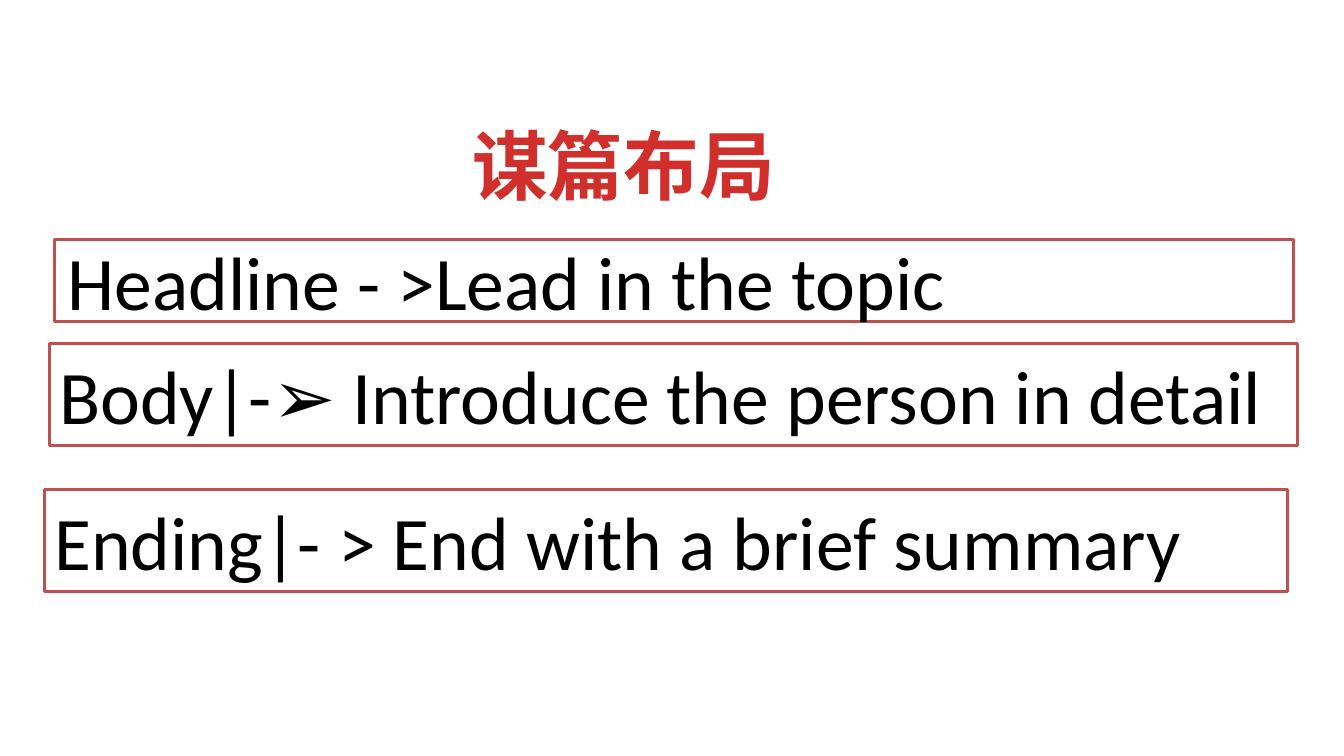
from pptx import Presentation
from pptx.dml.color import RGBColor
from pptx.enum.shapes import MSO_SHAPE
from pptx.enum.text import MSO_ANCHOR, PP_ALIGN
from pptx.util import Inches, Pt


def rgb(value):
    return RGBColor.from_string(value)


def write(sp, text, color, bold, align, anchor, inset):
    """Set the text of a shape, with inset as (horizontal, vertical) inches."""
    tf = sp.text_frame
    x, y = (Inches(v) for v in inset)
    frame_format = {
        "margin_left": x, "margin_right": x, "margin_top": y, "margin_bottom": y,
        "word_wrap": True, "vertical_anchor": anchor,
    }
    for name, value in frame_format.items():
        setattr(tf, name, value)
    p = tf.paragraphs[0]
    p.alignment = align
    r = p.add_run()
    r.text = text
    for name, value in {"name": "Calibri", "size": Pt(54), "bold": bold}.items():
        setattr(r.font, name, value)
    r.font.color.rgb = rgb(color)


prs = Presentation()
prs.slide_width, prs.slide_height = Inches(13.33), Inches(7.5)
s = prs.slides.add_slide(prs.slide_layouts[5])

title = s.shapes.title
title.left, title.top = Inches(4.56), Inches(1.13)
title.width, title.height = Inches(3.25), Inches(1.01)
write(title, "谋篇布局", "D02F2C", True, PP_ALIGN.CENTER, MSO_ANCHOR.TOP, (0.1, 0.05))

sections = [
    ("Headline - >Lead in the topic", (0.54, 2.38, 12.29, 0.81), MSO_ANCHOR.MIDDLE, (0.13, 0.06)),
    ("Body|-➢ Introduce the person in detail", (0.49, 3.41, 12.38, 1.01), MSO_ANCHOR.TOP, (0.1, 0.05)),
    ("Ending|- > End with a brief summary", (0.44, 4.86, 12.33, 1.01), MSO_ANCHOR.TOP, (0.1, 0.05)),
]
for text, box, anchor, inset in sections:
    sp = s.shapes.add_shape(MSO_SHAPE.RECTANGLE, *(Inches(v) for v in box))
    sp.shadow.inherit = False
    sp.fill.solid()
    sp.fill.fore_color.rgb = rgb("FFFFFF")
    sp.line.color.rgb = rgb("C0504D")
    sp.line.width = Pt(2)
    write(sp, text, "000000", False, PP_ALIGN.LEFT, anchor, inset)

prs.save("out.pptx")
